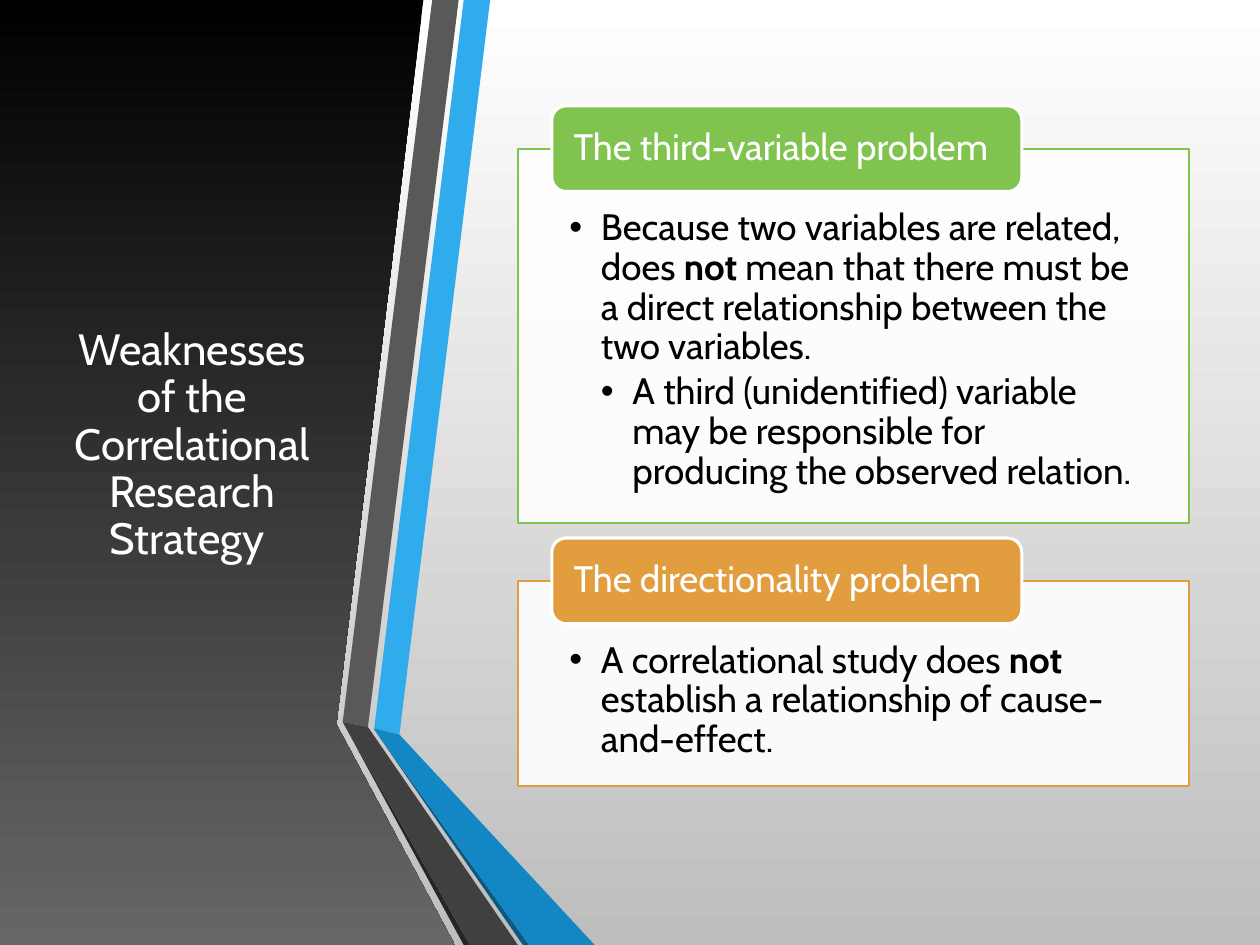
from lxml import etree
from pptx import Presentation
from pptx.dml.color import RGBColor
from pptx.enum.shapes import MSO_SHAPE
from pptx.enum.text import MSO_ANCHOR, MSO_AUTO_SIZE, PP_ALIGN
from pptx.oxml.ns import qn
from pptx.util import Inches, Pt

RECTANGLE = MSO_SHAPE.RECTANGLE
ROUNDED = MSO_SHAPE.ROUNDED_RECTANGLE
TOP, MIDDLE = MSO_ANCHOR.TOP, MSO_ANCHOR.MIDDLE
LEFT, CENTER = PP_ALIGN.LEFT, PP_ALIGN.CENTER
NO_AUTOFIT = MSO_AUTO_SIZE.NONE

FONT = "Cabin"
TITLE_ONLY = 5
COLORS = {
    "white": "FFFFFF", "silver": "BEBEBE", "black": "000000", "grey": "676767",
    "blue": "30ACEC", "deep_blue": "1287C3", "navy": "0C5A82",
    "slate": "595959", "charcoal": "404040", "soot": "262626",
    "green": "80C34F", "orange": "E29D3E",
}

PANEL = [(0, 0), (3.36, 0), (2.67, 5.75), (3.61, 7.5), (0, 7.5)]
RIBBONS = [
    ("blue", [(2.97, 5.78), (3.17, 5.83), (3.89, 0), (3.68, 0)]),
    ("slate", [(3.64, 0), (3.43, 0), (2.72, 5.73), (2.92, 5.77)]),
    ("soot", [(2.72, 5.73), (3.68, 7.5), (3.73, 7.5)]),
    ("navy", [(2.97, 5.79), (4.15, 7.5), (4.2, 7.5)]),
    ("deep_blue", [(2.97, 5.78), (2.97, 5.79), (4.2, 7.5), (4.72, 7.5), (3.17, 5.83)]),
    ("charcoal", [(2.72, 5.73), (3.73, 7.5), (4.11, 7.5), (2.92, 5.77)]),
]

# Each problem: heading, colour, box top, box height, bullets as (level, runs);
# a run is (text, bold).
PROBLEMS = [
    ("The third-variable problem", "green", 1.18, 2.97, [
        (0, [("Because two variables are related, does ", False), ("not", True),
             (" mean that there must be a direct relationship between the two variables.", False)]),
        (1, [("A third (unidentified) variable may be responsible for "
              "producing the observed relation.", False)]),
    ]),
    ("The directionality problem", "orange", 4.61, 1.63, [
        (0, [("A correlational study does ", False), ("not", True),
             (" establish a relationship of cause-and-effect.", False)]),
    ]),
]


def rgb(name):
    return RGBColor.from_string(COLORS[name])


def fill_downward(fill, top, bottom):
    """Apply a vertical gradient from the top colour to the bottom one."""
    fill.gradient()
    fill.gradient_angle = 270
    for stop, position, color in zip(fill.gradient_stops, (0, 1), (top, bottom)):
        stop.position = position
        stop.color.rgb = rgb(color)


def add_polygon(slide, points):
    start, *rest = [(Inches(x), Inches(y)) for x, y in points]
    builder = slide.shapes.build_freeform(*start)
    builder.add_line_segments(rest, close=True)
    polygon = builder.convert_to_shape()
    polygon.shadow.inherit = False
    polygon.line.fill.background()
    return polygon


def add_box(slide, kind, bounds, fill, line, width):
    box = slide.shapes.add_shape(kind, *map(Inches, bounds))
    box.shadow.inherit = False
    box.fill.solid()
    box.fill.fore_color.rgb = rgb(fill)
    box.line.color.rgb = rgb(line)
    box.line.width = Pt(width)
    return box


def set_opacity(shape, percent):
    color = shape.element.spPr.find(qn("a:solidFill")).find(qn("a:srgbClr"))
    etree.SubElement(color, qn("a:alpha"), val=str(percent * 1000))


def set_frame(frame, anchor, insets):
    frame.word_wrap = True
    frame.auto_size = NO_AUTOFIT
    frame.vertical_anchor = anchor
    (frame.margin_left, frame.margin_top,
     frame.margin_right, frame.margin_bottom) = map(Inches, insets)


def style_paragraph(paragraph, size, color, align=LEFT):
    paragraph.alignment = align
    paragraph.line_spacing = 0.9
    paragraph.font.name = FONT
    paragraph.font.size = Pt(size)
    paragraph.font.color.rgb = rgb(color)


def add_bullet(paragraph, level):
    paragraph.level = level
    properties = paragraph._p.get_or_add_pPr()
    properties.set("marL", str(Inches(0.25 * (level + 1))))
    properties.set("indent", str(Inches(-0.25)))
    etree.SubElement(properties, qn("a:buFont"), typeface="Arial")
    etree.SubElement(properties, qn("a:buChar"), char="•")


def add_problem(slide, heading, color, top, height, bullets):
    body = add_box(slide, RECTANGLE, (4.11, top, 5.33, height), "white", color, 1.25)
    set_opacity(body, 90)
    frame = body.text_frame
    set_frame(frame, TOP, (0.41, 0.48, 0.41, 0.16))
    for index, (level, runs) in enumerate(bullets):
        paragraph = frame.add_paragraph() if index else frame.paragraphs[0]
        add_bullet(paragraph, level)
        style_paragraph(paragraph, 21, "black")
        paragraph.space_after = Pt(3)
        for text, bold in runs:
            run = paragraph.add_run()
            run.text = text
            if bold:
                run.font.bold = True

    tab = add_box(slide, ROUNDED, (4.38, top - 0.34, 3.73, 0.68), color, "white", 1.75)
    set_frame(tab.text_frame, MIDDLE, (0.14, 0, 0.14, 0))
    tab.text_frame.text = heading
    style_paragraph(tab.text_frame.paragraphs[0], 21, "white")


def place_title(slide):
    """Fill the title placeholder and bring it in front of the dark panel."""
    title = slide.shapes.title
    title.left, title.top, title.width, title.height = map(Inches, (0.44, 0.75, 2.17, 5.58))
    set_frame(title.text_frame, MIDDLE, (0.1, 0.05, 0.1, 0.05))
    title.text_frame.text = "Weaknesses of the Correlational Research Strategy "
    style_paragraph(title.text_frame.paragraphs[0], 25, "white", CENTER)
    slide.shapes.element.append(title.element)


def main():
    deck = Presentation()
    deck.slide_width, deck.slide_height = Inches(10), Inches(7.5)
    slide = deck.slides.add_slide(deck.slide_layouts[TITLE_ONLY])
    fill_downward(slide.background.fill, "white", "silver")

    fill_downward(add_polygon(slide, PANEL).fill, "black", "grey")
    place_title(slide)
    for color, points in RIBBONS:
        ribbon = add_polygon(slide, points)
        ribbon.fill.solid()
        ribbon.fill.fore_color.rgb = rgb(color)

    for problem in PROBLEMS:
        add_problem(slide, *problem)
    deck.save("out.pptx")


if __name__ == "__main__":
    main()
